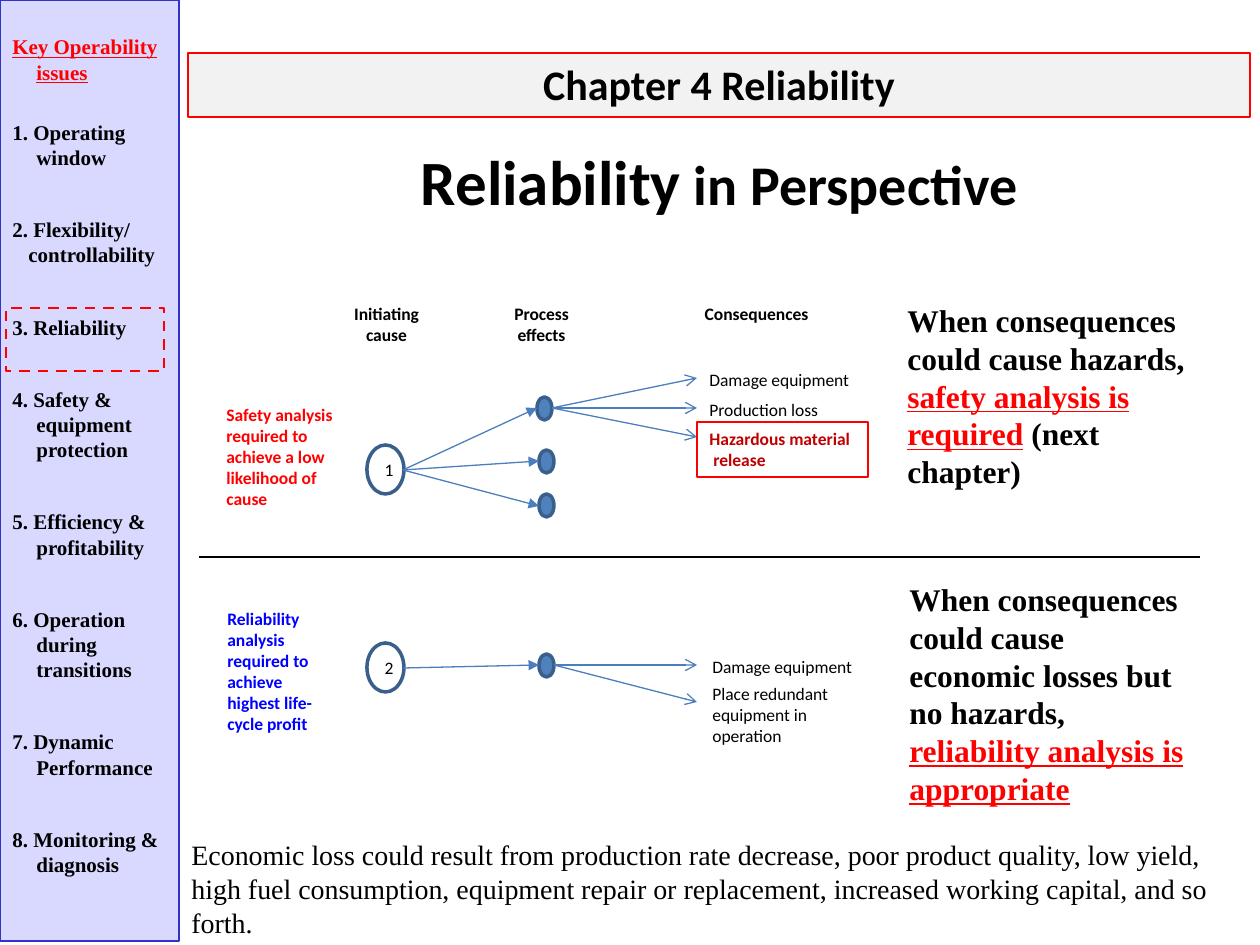
from dataclasses import dataclass

from lxml import etree
from pptx import Presentation
from pptx.dml.color import RGBColor
from pptx.enum import dml, shapes, text
from pptx.oxml.ns import qn
from pptx.util import Emu, Pt

PX = 914400 / 126  # one px in EMU
SERIF, SANS = "Times New Roman", "Calibri"
BLACK, RED, DARK_RED, BLUE = "000000", "FF0000", "C00000", "0000FF"
NODE_FILL, NODE_LINE, ARROW = "4F81BD", "3A5F8C", "4B7EBC"
LEFT, CENTER = text.PP_ALIGN.LEFT, text.PP_ALIGN.CENTER


@dataclass
class Run:
    text: str
    size: int
    color: str = BLACK
    bold: bool = True
    underline: bool = False
    font: str = SANS


@dataclass
class Para:
    runs: list[Run]
    align: text.PP_ALIGN = LEFT
    before: int = 0   # space before, px
    margin: int = 0   # left margin, px
    indent: int = 0   # first line offset, px


@dataclass
class Box:
    x: int
    y: int
    w: int
    h: int


@dataclass
class Fan:
    """Arrows that leave one point and end at several."""
    x: int
    y: int
    ends: list[tuple[int, int]]
    head: str


def px(n: int) -> Emu:
    return Emu(round(n * PX))


def rgb(color: str) -> RGBColor:
    return RGBColor.from_string(color)


def write(tf, paras: list[Para], top: int = 6) -> None:
    tf.word_wrap = True
    tf.margin_top = px(top)
    for i, para in enumerate(paras):
        p = tf.paragraphs[0] if i == 0 else tf.add_paragraph()
        p.alignment = para.align
        p.space_before = px(para.before)
        if para.margin:
            pPr = p._p.get_or_add_pPr()
            pPr.set("marL", str(px(para.margin)))
            pPr.set("indent", str(px(para.indent)))
        for run in para.runs:
            r = p.add_run()
            r.text = run.text
            r.font.name, r.font.size = run.font, Pt(run.size)
            r.font.bold, r.font.underline = run.bold, run.underline
            r.font.color.rgb = rgb(run.color)


def add_text(s, box: Box, *paras: Para) -> None:
    sp = s.shapes.add_textbox(px(box.x), px(box.y), px(box.w), px(box.h))
    write(sp.text_frame, list(paras))


def add_shape(s, kind, box: Box, line: str, width: float, fill: str | None = None):
    sp = s.shapes.add_shape(kind, px(box.x), px(box.y), px(box.w), px(box.h))
    sp.shadow.inherit = False
    if fill:
        sp.fill.solid()
        sp.fill.fore_color.rgb = rgb(fill)
    else:
        sp.fill.background()
    sp.line.color.rgb, sp.line.width = rgb(line), Pt(width)
    sp.text_frame.vertical_anchor = text.MSO_ANCHOR.TOP
    return sp


def add_line(s, x1: int, y1: int, x2: int, y2: int, color: str, head: str = "") -> None:
    c = s.shapes.add_connector(shapes.MSO_CONNECTOR.STRAIGHT, px(x1), px(y1), px(x2), px(y2))
    c.line.color.rgb, c.line.width = rgb(color), Pt(0.75)
    if head:
        etree.SubElement(c.line._get_or_add_ln(), qn("a:tailEnd"), type=head)
    etree.SubElement(c._element.spPr, qn("a:effectLst"))


RECT, OVAL = shapes.MSO_SHAPE.RECTANGLE, shapes.MSO_SHAPE.OVAL

prs = Presentation()
prs.slide_width, prs.slide_height = px(1260), px(945)
s = prs.slides.add_slide(prs.slide_layouts[6])

# Title
add_text(s, Box(179, 137, 1081, 90),
         Para([Run("Reliability", 36), Run(" in Perspective", 32)], CENTER))

# Conclusions on the right and the closing note
add_text(s, Box(895, 295, 305, 203), Para([
    Run("When consequences could cause hazards, ", 18, font=SERIF),
    Run("safety analysis is required", 18, RED, underline=True, font=SERIF),
    Run(" ", 18, bold=False, font=SERIF),
    Run("(next chapter)", 18, font=SERIF)]))
add_text(s, Box(897, 574, 305, 242), Para([
    Run("When consequences could cause economic losses but no hazards, ", 18, font=SERIF),
    Run("reliability analysis is appropriate", 18, RED, underline=True, font=SERIF)]))
add_text(s, Box(179, 832, 1053, 115), Para([Run(
    "Economic loss could result from production rate decrease, poor product quality, "
    "low yield, high fuel consumption, equipment repair or replacement, increased "
    "working capital, and so forth.", 16, bold=False, font=SERIF)]))

# Sidebar of issues
HANG, GAP, HEADING_GAP = 24, 47, 35
issues = ["1. Operating window", "2. Flexibility/", "3. Reliability",
          "4. Safety & equipment protection", "5. Efficiency & profitability",
          "6. Operation during transitions", "7. Dynamic Performance",
          "8. Monitoring & diagnosis"]
items = [Para([Run("Key Operability issues", 12, RED, underline=True, font=SERIF)],
              margin=HANG, indent=-HANG)]
for i, issue in enumerate(issues):
    items.append(Para([Run(issue, 12, font=SERIF)], before=GAP if i else HEADING_GAP,
                      margin=HANG, indent=-HANG))
items.insert(3, Para([Run("controllability", 12, font=SERIF)], margin=HANG, indent=-8))
sidebar = add_shape(s, RECT, Box(0, 0, 179, 941), "3333CC", 0.75, "D9D9FF")
write(sidebar.text_frame, items, top=34)

current = add_shape(s, RECT, Box(6, 308, 158, 63), RED, 1.5)
current.line.dash_style = dml.MSO_LINE.DASH

# Chapter bar and divider
add_line(s, 199, 557, 1200, 557, BLACK)
bar = add_shape(s, RECT, Box(188, 53, 1062, 64), RED, 0.75, "F2F2F2")
write(bar.text_frame, [Para([Run("Chapter 4 Reliability", 24)], CENTER)])

# Column headings
for heading, x, w in [("Initiating cause", 334, 105), ("Process effects", 489, 105),
                      ("Consequences", 689, 135)]:
    add_text(s, Box(x, 297, w, 26), Para([Run(heading, 10)], CENTER))

# Initiating causes
for number, y in [("1", 445), ("2", 643)]:
    sp = add_shape(s, OVAL, Box(367, y, 37, 49), NODE_LINE, 2)
    sp.text_frame.vertical_anchor = text.MSO_ANCHOR.MIDDLE
    write(sp.text_frame, [Para([Run(number, 10, bold=False)], CENTER)])

# Process effects
for x, y in [(537, 397), (539, 450), (539, 494), (539, 654)]:
    add_shape(s, OVAL, Box(x, y, 15, 23), NODE_LINE, 2, NODE_FILL)

# Arrows from cause to effect to consequence
for fan in [Fan(403, 470, [(537, 408), (539, 461), (539, 506)], "triangle"),
            Fan(552, 408, [(697, 378), (697, 408), (697, 437)], "arrow"),
            Fan(403, 668, [(539, 665)], "triangle"),
            Fan(554, 665, [(697, 665), (697, 702)], "arrow")]:
    for end_x, end_y in fan.ends:
        add_line(s, fan.x, fan.y, end_x, end_y, ARROW, fan.head)

# Consequences
for label, x, y, h in [("Damage equipment", 697, 363, 26), ("Production loss", 697, 393, 26),
                       ("Damage equipment", 700, 650, 26),
                       ("Place redundant equipment in operation", 700, 677, 43)]:
    add_text(s, Box(x, y, 171, h), Para([Run(label, 10, bold=False)]))
hazard = add_shape(s, RECT, Box(697, 422, 171, 55), RED, 1.5)
write(hazard.text_frame, [Para([Run(line, 10, DARK_RED)])
                          for line in ("Hazardous material", " release")])

# Required analyses
add_text(s, Box(214, 398, 135, 60), Para([Run(
    "Safety analysis required to achieve a low likelihood of cause", 10, RED)]))
add_text(s, Box(215, 602, 135, 140), Para([Run(
    "Reliability analysis required to achieve highest life-cycle profit", 10, BLUE)]))

prs.save("out.pptx")
